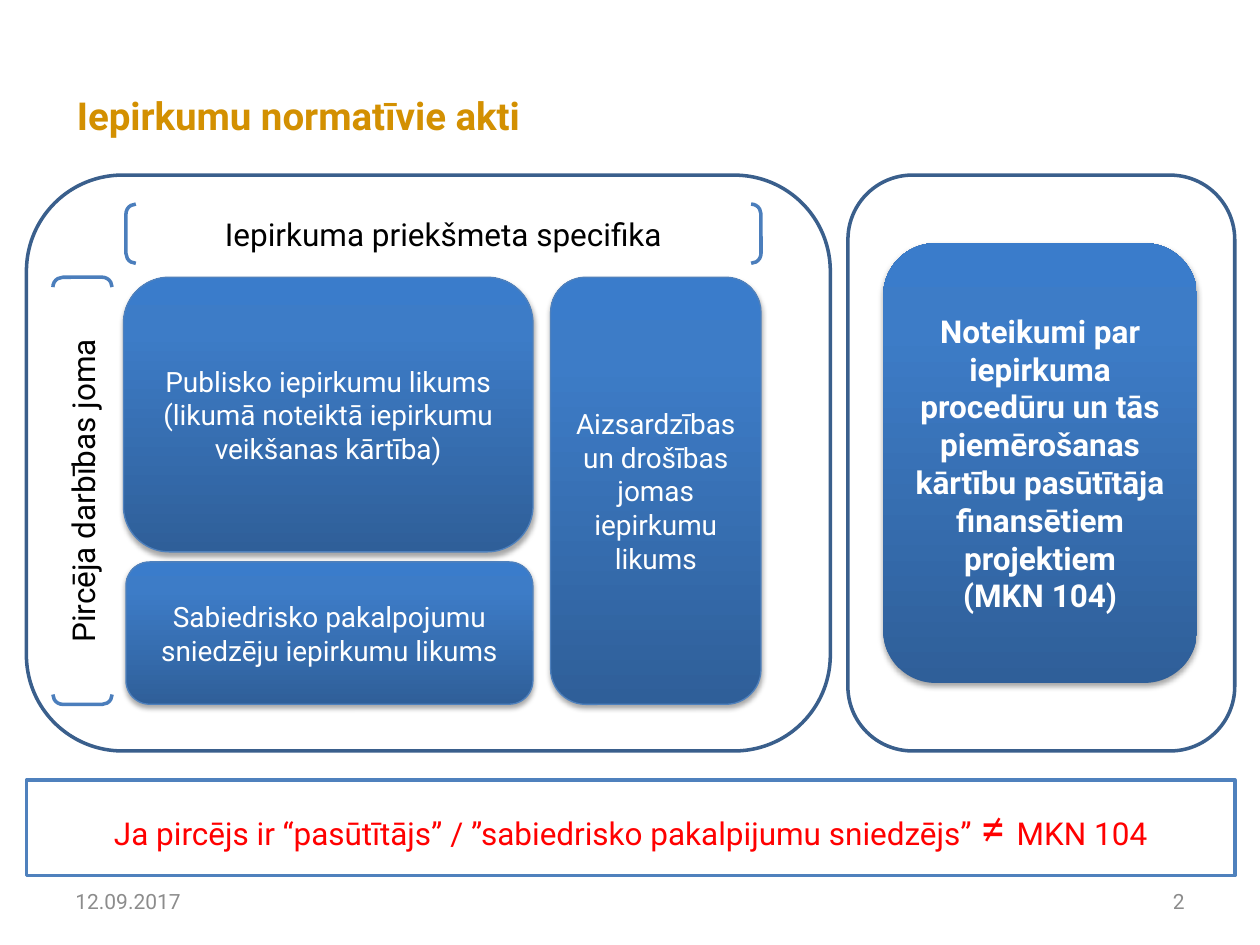
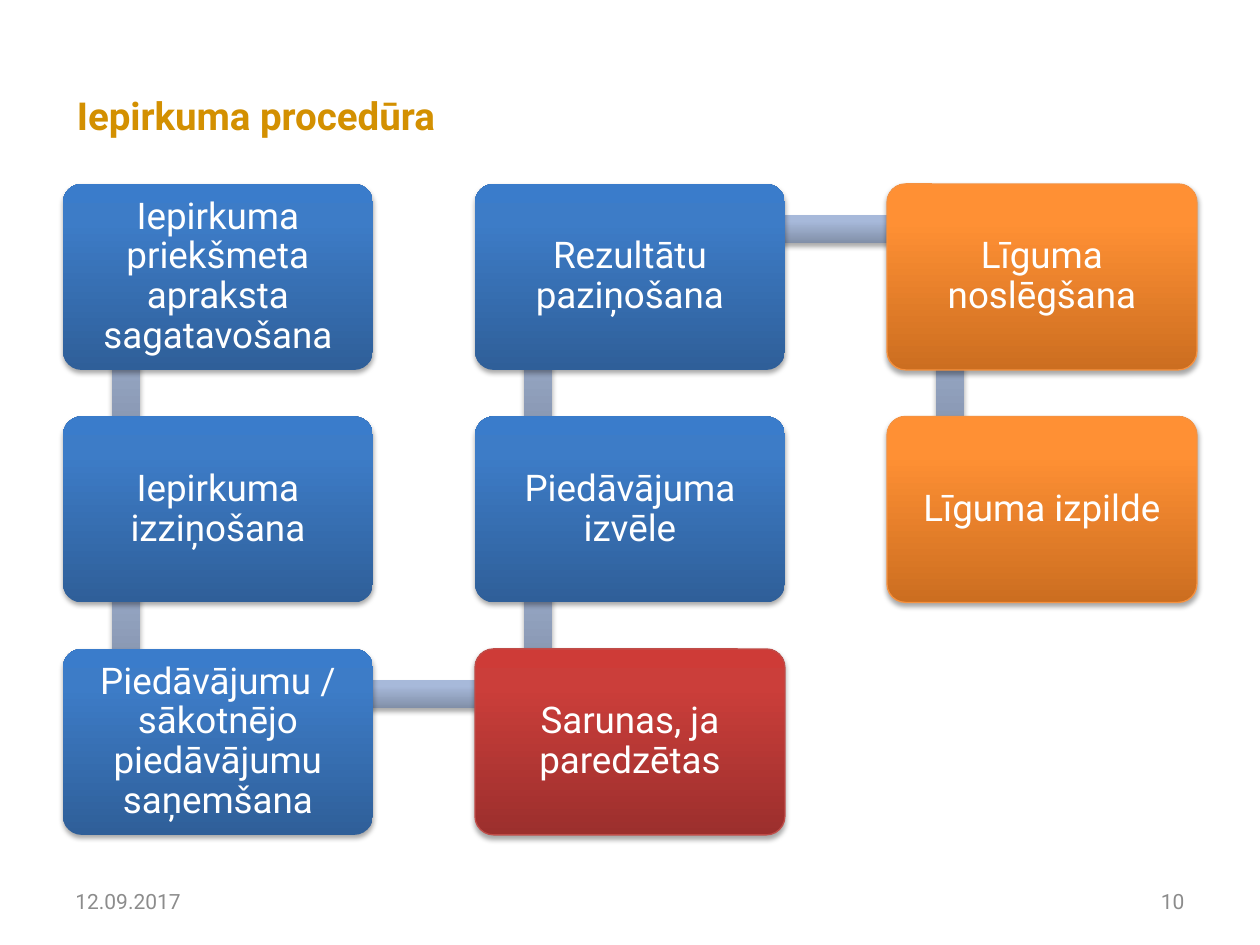
from copy import deepcopy

from lxml import etree
from pptx import Presentation
from pptx import util as u
from pptx.dml.color import RGBColor
from pptx.enum import shapes, text
from pptx.oxml.ns import qn

FONT = "Roboto"
DATE = "12.09.2017"
COLORS = {
    "title": "D39001", "footer": "8C8C8C", "white": "FFFFFF", "black": "000000",
    "warning": "FF0000", "edge": "4F81BD", "bracket": "4B7EBC", "frame": "3A5F8C",
    "red_edge": "BF4C48", "orange_edge": "F69240",
}
# Gradient colours from bottom to top, at these positions
STOPS = (0, 0.8, 1)
GRADIENTS = {
    "blue": ("2F5F99", "3D7CC7", "3A7CCB"),
    "red": ("9C2F2D", "CB3E3A", "CE3B37"),
    "orange": ("CC6E20", "FF9034", "FF9136"),
    "bar": ("818FA8", "A7B9DA", "A7BADC"),
}
SHAPE = shapes.MSO_SHAPE
ALIGN = text.PP_ALIGN


def rgb(name):
    return RGBColor.from_string(COLORS[name])


class Deck:
    def __init__(self):
        self.prs = Presentation()
        self.prs.slide_width, self.prs.slide_height = u.Inches(10), u.Inches(7.5)
        self.s = None

    def slide(self, title, number):
        """Start a slide with its title, date and number."""
        self.s = self.prs.slides.add_slide(self.prs.slide_layouts[5])
        sp = self.s.shapes.title
        sp.left, sp.top, sp.width, sp.height = map(u.Inches, (0.51, 0.68, 6.22, 0.47))
        self.add_text(sp, [[(title, 22)]], "title", bold=True, align=ALIGN.LEFT)
        self.footer(0.5, DATE, ALIGN.LEFT)
        self.footer(7.17, number, ALIGN.RIGHT)

    def footer(self, left, words, align):
        sp = self.s.shapes.add_textbox(*map(u.Inches, (left, 6.95, 2.33, 0.4)))
        self.add_text(sp, [[(words, 12)]], "footer", align=align)

    def add_text(self, sp, paragraphs, color, bold=False, align=ALIGN.CENTER, spacing=None):
        """Fill a shape with paragraphs, each a list of (words, size) runs."""
        tf = sp.text_frame
        tf.word_wrap = True
        tf.vertical_anchor = text.MSO_ANCHOR.MIDDLE
        for i, runs in enumerate(paragraphs):
            p = tf.add_paragraph() if i else tf.paragraphs[0]
            p.alignment = align
            if spacing:
                p.line_spacing = spacing
            for words, size in runs:
                r = p.add_run()
                r.text = words
                r.font.name, r.font.size, r.font.bold = FONT, u.Pt(size), bold
                r.font.color.rgb = rgb(color)

    def shape(self, kind, at, line=None, weight=2.0, fill=None):
        sp = self.s.shapes.add_shape(kind, *map(u.Inches, at))
        sp.shadow.inherit = False
        if fill:
            sp.fill.solid()
            sp.fill.fore_color.rgb = rgb(fill)
        else:
            sp.fill.background()
        if line:
            sp.line.color.rgb = rgb(line)
            sp.line.width = u.Pt(weight)
        else:
            sp.line.fill.background()
        return sp

    def glossy(self, kind, at, gradient, line=None):
        """Add a shape with a three-stop gradient and a soft shadow below."""
        sp = self.shape(kind, at, line, 0.75)
        sp.fill.gradient()
        sp.fill.gradient_angle = 90
        props = sp._element.spPr
        stop_list = props.find(".//" + qn("a:gsLst"))
        stop_list.append(deepcopy(stop_list[-1]))
        for stop, position, color in zip(sp.fill.gradient_stops, STOPS, GRADIENTS[gradient]):
            stop.position = position
            stop.color.rgb = RGBColor.from_string(color)
        shadow = etree.SubElement(
            props.find(qn("a:effectLst")), qn("a:outerShdw"), blurRad=str(u.Pt(3.1)),
            dist=str(u.Pt(1.8)), dir="5400000", rotWithShape="0")
        color = etree.SubElement(shadow, qn("a:srgbClr"), val=COLORS["black"])
        etree.SubElement(color, qn("a:alpha"), val="35000")
        return sp

    def law(self, at, lines, size=16, bold=False, line="edge"):
        sp = self.glossy(SHAPE.ROUNDED_RECTANGLE, at, "blue", line)
        self.add_text(sp, [[(words, size)] for words in lines], "white", bold)

    def bracket(self, at, words, rotation=0):
        sp = self.shape(SHAPE.DOUBLE_BRACKET, at, "bracket")
        sp.rotation = rotation
        self.add_text(sp, [[(words, 18)]], "black")

    def step(self, at, words, gradient, line):
        sp = self.glossy(SHAPE.ROUNDED_RECTANGLE, at, gradient, line)
        sp.adjustments[0] = 0.1
        tf = sp.text_frame
        tf.margin_left = tf.margin_right = tf.margin_top = tf.margin_bottom = u.Inches(0.09)
        self.add_text(sp, [[(words, 21)]], "white", spacing=0.9)


def legal_acts(deck):
    deck.slide("Iepirkumu normatīvie akti", "2")

    # Laws by buyer's field and by subject
    deck.law((1, 4.46, 3.23, 1.13), ["Sabiedrisko pakalpojumu sniedzēju iepirkumu likums"])
    deck.law((0.98, 2.2, 3.25, 2.18), ["Publisko iepirkumu likums",
                                       "(likumā noteiktā iepirkumu veikšanas kārtība)"])
    deck.law((4.37, 2.2, 1.67, 3.39), ["Aizsardzības un drošības jomas iepirkumu likums"])
    deck.bracket((1, 1.62, 5.04, 0.47), "Iepirkuma priekšmeta specifika")
    deck.bracket((-1.04, 3.66, 3.39, 0.47), "Pircēja darbības joma", 270)

    # Regulations
    deck.law((7.01, 1.93, 2.49, 3.49),
             ["Noteikumi par iepirkuma procedūru un tās piemērošanas kārtību "
              "pasūtītāja finansētiem projektiem", "(MKN 104)"], 18, True, None)

    # Frames around both groups
    for left, width in ((0.21, 6.38), (6.73, 3.07)):
        deck.shape(SHAPE.ROUNDED_RECTANGLE, (left, 1.39, width, 4.57), "frame")

    # Conclusion
    sp = deck.shape(SHAPE.RECTANGLE, (0.21, 6.19, 9.59, 0.76), "edge", fill="white")
    deck.add_text(sp, [[("Ja pircējs ir “pasūtītājs” / ”sabiedrisko pakalpijumu sniedzējs” ", 18),
                        ("≠ ", 26), ("MKN 104", 18)]], "warning")


def procedure(deck):
    deck.slide("Iepirkuma procedūra", "10")
    box_w = 2.46
    box_h = 0.6 * box_w
    pitch_x, pitch_y = 3.27, 1.25 * box_h
    bar = 0.22
    blue, red, orange = ("blue", None), ("red", "red_edge"), ("orange", "orange_edge")
    # Column, row, words and style, in the order of the procedure
    steps = [
        (0, 0, "Iepirkuma priekšmeta apraksta sagatavošana", blue),
        (0, 1, "Iepirkuma izziņošana", blue),
        (0, 2, "Piedāvājumu / sākotnējo piedāvājumu saņemšana", blue),
        (1, 2, "Sarunas, ja paredzētas", red),
        (1, 1, "Piedāvājuma izvēle", blue),
        (1, 0, "Rezultātu paziņošana", blue),
        (2, 0, "Līguma noslēgšana", orange),
        (2, 1, "Līguma izpilde", orange),
    ]

    def corner(col, row):
        return 0.5 + col * pitch_x, 1.46 + row * pitch_y

    # Bars between consecutive steps, behind the boxes
    for (col, row, *_), (next_col, next_row, *_) in zip(steps, steps[1:]):
        x, y = corner(col, min(row, next_row))
        if col == next_col:
            at = (x + 0.39, y + 0.37, bar, pitch_y)
        else:
            at = (x + 0.51, y + 0.25, pitch_x, bar)
        deck.glossy(SHAPE.RECTANGLE, at, "bar")

    # Step boxes
    for col, row, words, (gradient, line) in steps:
        deck.step((*corner(col, row), box_w, box_h), words, gradient, line)


def main():
    deck = Deck()
    legal_acts(deck)
    procedure(deck)
    deck.prs.save("out.pptx")


if __name__ == "__main__":
    main()
